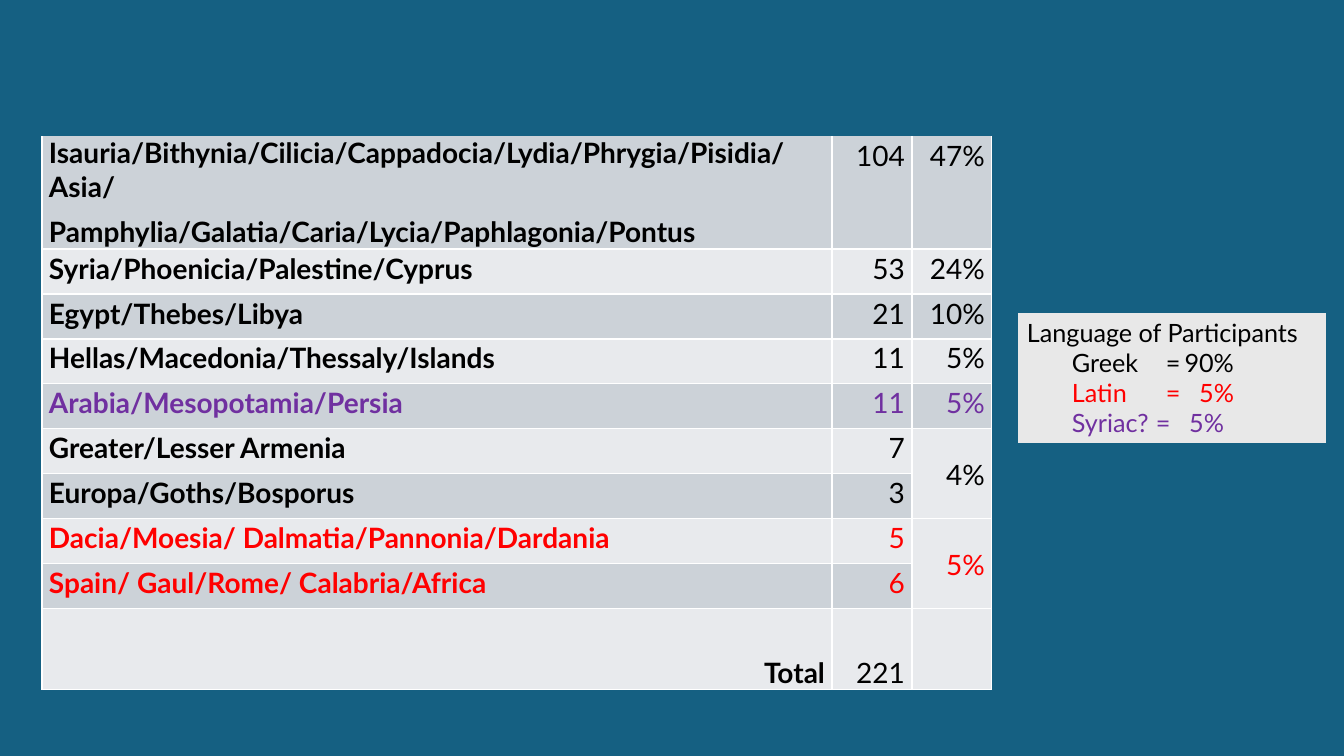
import pptx
import pptx.dml.color
import pptx.enum.shapes
import pptx.enum.text
import pptx.oxml
import pptx.oxml.ns
import pptx.util

PX = 914400 / 100.8
FONT = "Lato"
BLUE, DARK_BAND, LIGHT_BAND = "156082", "CCD2D8", "E8EAED"
BLACK, RED, PURPLE, WHITE = "000000", "FF0000", "7030A0", "FFFFFF"
ALIGN = pptx.enum.text.PP_ALIGN
ANCHOR = pptx.enum.text.MSO_ANCHOR


def px(length):
    return pptx.util.Emu(round(length * PX))


def rgb(color):
    return pptx.dml.color.RGBColor.from_string(color)


deck = pptx.Presentation()
deck.slide_width, deck.slide_height = px(1344), px(756)
slide = deck.slides.add_slide(deck.slide_layouts[6])
slide.background.fill.solid()
slide.background.fill.fore_color.rgb = rgb(BLUE)

# Regions, number of participants, share, text colour
regions = [
    ("", "", "", BLACK),
    ("Isauria/Bithynia/Cilicia/Cappadocia/Lydia/Phrygia/Pisidia/Asia/\n"
     "Pamphylia/Galatia/Caria/Lycia/Paphlagonia/Pontus", "104", "47%", BLACK),
    ("Syria/Phoenicia/Palestine/Cyprus", "53", "24%", BLACK),
    ("Egypt/Thebes/Libya", "21", "10%", BLACK),
    ("Hellas/Macedonia/Thessaly/Islands", "11", "5%", BLACK),
    ("Arabia/Mesopotamia/Persia", "11", "5%", PURPLE),
    ("Greater/Lesser Armenia", "7", "4%", BLACK),
    ("Europa/Goths/Bosporus", "3", "", BLACK),
    ("Dacia/Moesia/ Dalmatia/Pannonia/Dardania", "5", "5%", RED),
    ("Spain/ Gaul/Rome/ Calabria/Africa", "6", "", RED),
    ("Total", "221", "", BLACK),
]
row_heights = [36, 113] + [45] * 8 + [81]
column_widths = [790, 80, 80]
total_row = len(regions) - 1
shared_rows = (6, 8)

table = slide.shapes.add_table(
    len(regions), 3, px(42), px(100), px(sum(column_widths)), px(sum(row_heights))
).table
table.first_row = table.horz_banding = False
for column, width in zip(table.columns, column_widths):
    column.width = px(width)
for row, height in zip(table.rows, row_heights):
    row.height = px(height)

for r, (region, count, share, color) in enumerate(regions):
    for c, text in enumerate((region, count, share)):
        cell = table.cell(r, c)
        cell.margin_left = cell.margin_right = px(7)
        cell.margin_top = cell.margin_bottom = 0
        if r == total_row:
            cell.vertical_anchor = ANCHOR.BOTTOM
        elif c == 2 and r in shared_rows:
            cell.vertical_anchor = ANCHOR.MIDDLE

        for side in "LRTB":
            hidden = r == 0 or (r == 1 and side == "T")
            paint = "<a:noFill/>" if hidden else (
                f'<a:solidFill><a:srgbClr val="{WHITE}"/></a:solidFill>')
            cell._tc.get_or_add_tcPr().append(pptx.oxml.parse_xml(
                f'<a:ln{side} {pptx.oxml.ns.nsdecls("a")} w="12700">{paint}</a:ln{side}>'))
        cell.fill.solid()
        cell.fill.fore_color.rgb = rgb(
            BLUE if r == 0 else DARK_BAND if r % 2 else LIGHT_BAND)

        cell.text = text
        for paragraph in cell.text_frame.paragraphs:
            paragraph.font.name = FONT
            paragraph.font.size = pptx.util.Pt(20)
            paragraph.font.bold = c == 0
            paragraph.font.color.rgb = rgb(color)
            paragraph.space_after = pptx.util.Pt(8)
            paragraph.line_spacing = 1.0 if (r, c) == (1, 0) else 1.07
            if c > 0 or r == total_row:
                paragraph.alignment = ALIGN.RIGHT

for r in shared_rows:
    table.cell(r, 2).merge(table.cell(r + 1, 2))

languages = slide.shapes.add_shape(
    pptx.enum.shapes.MSO_SHAPE.RECTANGLE, px(1017), px(312), px(310), px(132))
languages.shadow.inherit = False
languages.fill.solid()
languages.fill.fore_color.rgb = rgb("E8E8E8")
languages.line.color.rgb = rgb(BLUE)
languages.line.width = pptx.util.Pt(2)
frame = languages.text_frame
frame.word_wrap = True
frame.vertical_anchor = ANCHOR.TOP
frame.margin_left = frame.margin_right = px(10)
frame.margin_top = frame.margin_bottom = px(5)

# Text, colour, tab stops for name, equals sign and right edge of the value
language_lines = [
    ("Language of Participants", BLACK, ()),
    ("\tGreek\t=\t90%", BLACK, (45, 139, 207)),
    ("\tLatin\t=\t5%", RED, (45, 139, 207)),
    ("\tSyriac?\t=\t5%", PURPLE, (45, 129, 197)),
]
frame.text = "\n".join(text for text, _, _ in language_lines)
for paragraph, (_, color, stops) in zip(frame.paragraphs, language_lines):
    paragraph.alignment = ALIGN.LEFT
    paragraph.font.name = FONT
    paragraph.font.size = pptx.util.Pt(18)
    paragraph.font.color.rgb = rgb(color)
    if stops:
        tabs = "".join(f'<a:tab pos="{px(stop)}" algn="{side}"/>'
                       for stop, side in zip(stops, "llr"))
        paragraph._p.get_or_add_pPr().insert_element_before(pptx.oxml.parse_xml(
            f'<a:tabLst {pptx.oxml.ns.nsdecls("a")}>{tabs}</a:tabLst>'),
            "a:defRPr", "a:extLst")

deck.save("out.pptx")
